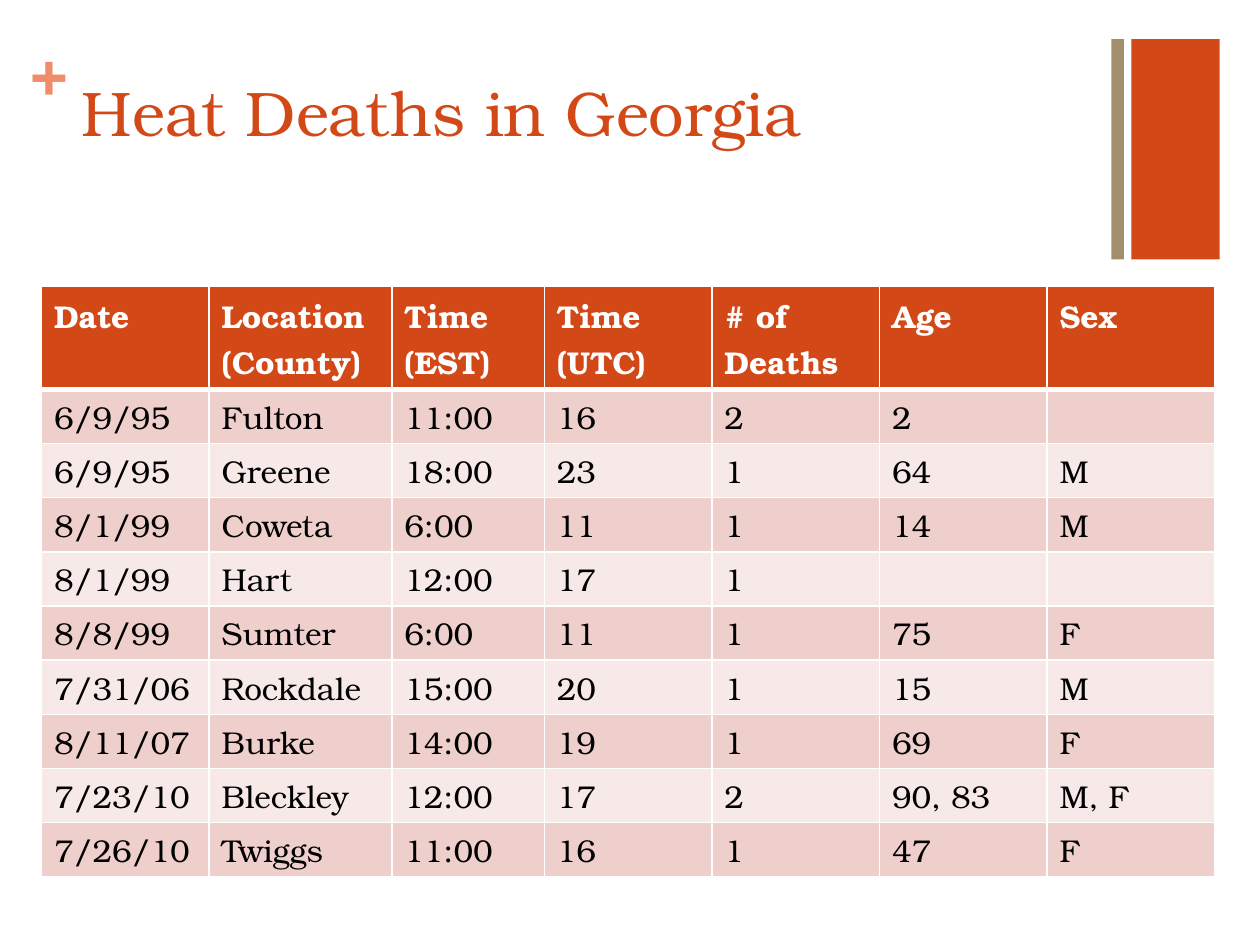
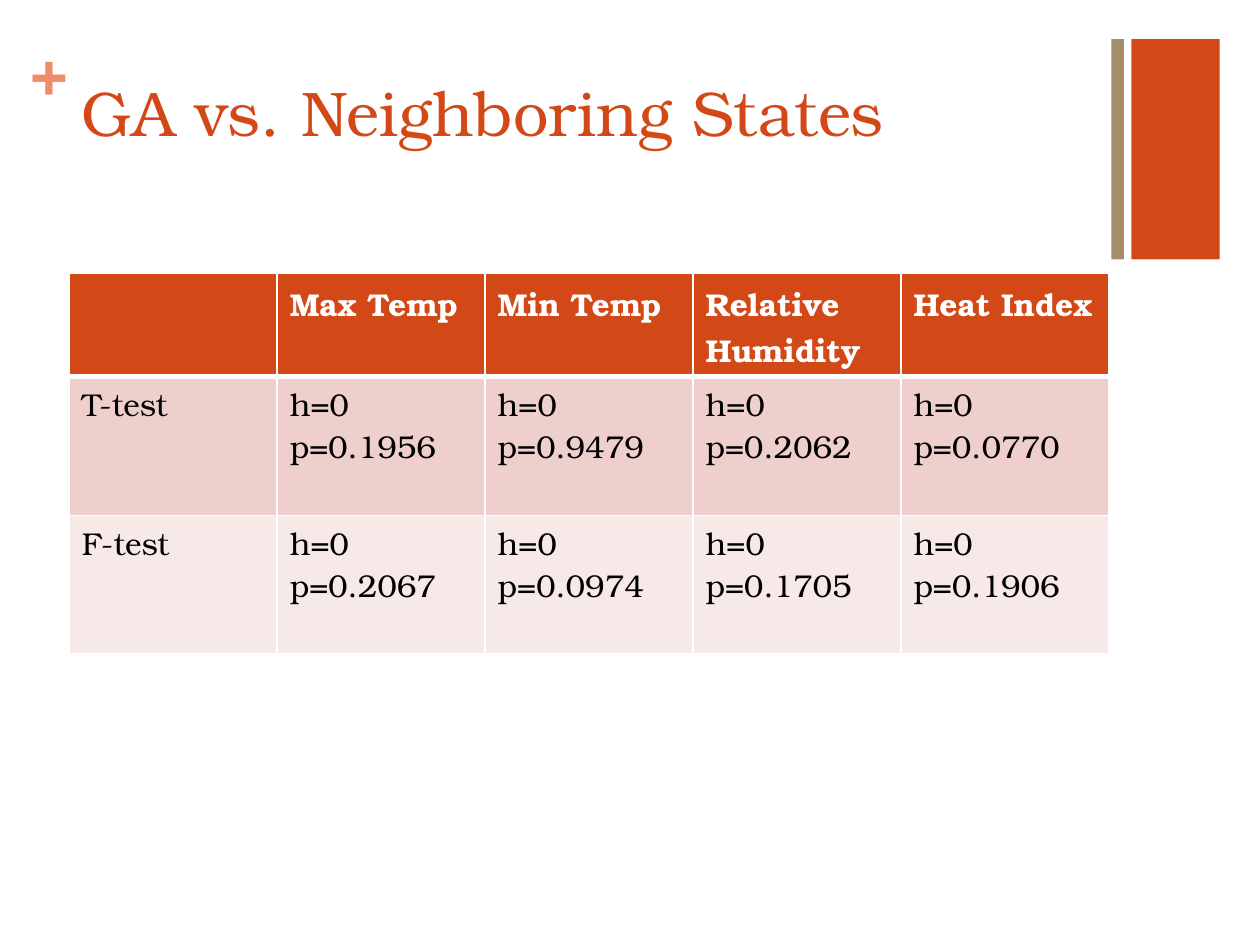
"""Build two slides of tables about heat deaths in Georgia."""
from lxml.etree import SubElement
from pptx import Presentation
from pptx.dml.color import RGBColor
from pptx.enum.shapes import MSO_SHAPE
from pptx.enum.text import MSO_ANCHOR, MSO_AUTO_SIZE, PP_ALIGN
from pptx.oxml.ns import qn
from pptx.util import Inches, Pt

FONT = "TeX Gyre Bonum"
ACCENT = "D34817"
TAN = "A28E6A"
SALMON = "EF8C6A"
WHITE = "FFFFFF"
BLACK = "000000"
BANDS = ("EFCFCC", "F7E9E8")
TITLE_ONLY = 5

DEATHS = [
    ("Date", "Location (County)", "Time (EST)", "Time (UTC)", "# of Deaths", "Age", "Sex"),
    ("6/9/95", "Fulton", "11:00", "16", "2", "2", ""),
    ("6/9/95", "Greene", "18:00", "23", "1", "64", "M"),
    ("8/1/99", "Coweta", "6:00", "11", "1", "14", "M"),
    ("8/1/99", "Hart", "12:00", "17", "1", "", ""),
    ("8/8/99", "Sumter", "6:00", "11", "1", "75", "F"),
    ("7/31/06", "Rockdale", "15:00", "20", "1", "15", "M"),
    ("8/11/07", "Burke", "14:00", "19", "1", "69", "F"),
    ("7/23/10", "Bleckley", "12:00", "17", "2", "90, 83", "M, F"),
    ("7/26/10", "Twiggs", "11:00", "16", "1", "47", "F"),
]
TESTS = [
    ("", "Max Temp", "Min Temp", "Relative Humidity", "Heat Index"),
    ("T-test", "h=0\np=0.1956", "h=0\np=0.9479", "h=0\np=0.2062", "h=0\np=0.0770"),
    ("F-test", "h=0\np=0.2067", "h=0\np=0.0974", "h=0\np=0.1705", "h=0\np=0.1906"),
]


def color(hex_string):
    """Turn a hex string into a colour."""
    return RGBColor.from_string(hex_string)


class Deck:
    """Hold the shared style and the current slide."""

    def __init__(self):
        """Start an empty presentation."""
        self.presentation = Presentation()
        self.presentation.slide_width = Inches(10)
        self.presentation.slide_height = Inches(7.5)
        self.slide = None

    def add_slide(self, title):
        """Add a slide with its decoration and title."""
        layout = self.presentation.slide_layouts[TITLE_ONLY]
        self.slide = self.presentation.slides.add_slide(layout)
        self.bar(8.98, 0.7, ACCENT)
        self.plus()
        self.bar(8.82, 0.1, TAN)
        self.title(title)

    def format_text(self, text_frame, size, hex_string, bold=False):
        """Align and format every run of a text frame."""
        for paragraph in text_frame.paragraphs:
            paragraph.alignment = PP_ALIGN.LEFT
            for run in paragraph.runs:
                run.font.name = FONT
                run.font.size = Pt(size)
                run.font.bold = bold
                run.font.color.rgb = color(hex_string)

    def bar(self, left, width, fill):
        """Add an upright bar in the top right corner."""
        shape = self.slide.shapes.add_shape(
            MSO_SHAPE.RECTANGLE, Inches(left), Inches(0.31), Inches(width), Inches(1.75))
        shape.shadow.inherit = False
        shape.fill.solid()
        shape.fill.fore_color.rgb = color(fill)
        shape.line.fill.background()

    def plus(self):
        """Add the plus sign beside the title."""
        box = self.slide.shapes.add_textbox(
            Inches(0.24), Inches(0.25), Inches(0.29), Inches(0.61))
        text_frame = box.text_frame
        text_frame.margin_left = text_frame.margin_right = 0
        text_frame.margin_top = text_frame.margin_bottom = 0
        text_frame.word_wrap = True
        text_frame.text = "+"
        self.format_text(text_frame, 36, SALMON, bold=True)

    def title(self, text):
        """Place and format the title placeholder."""
        title = self.slide.shapes.title
        title.left, title.top = Inches(0.55), Inches(0.53)
        title.width, title.height = Inches(8.26), Inches(1.22)
        text_frame = title.text_frame
        text_frame.text = text
        text_frame.auto_size = MSO_AUTO_SIZE.NONE
        text_frame.vertical_anchor = MSO_ANCHOR.TOP
        self.format_text(text_frame, 36, ACCENT)

    def borders(self, cell, top, bottom):
        """Draw white borders around a cell."""
        properties = cell._tc.get_or_add_tcPr()
        for side, width in (("L", 1), ("R", 1), ("T", top), ("B", bottom)):
            line = SubElement(properties, qn(f"a:ln{side}"), w=str(Pt(width)))
            fill = SubElement(line, qn("a:solidFill"))
            SubElement(fill, qn("a:srgbClr"), val=WHITE)

    def table(self, rows, left, top, widths, row_height):
        """Add a banded table with a header row."""
        heights = [0.82] + [row_height] * (len(rows) - 1)
        table = self.slide.shapes.add_table(
            len(rows), len(widths), Inches(left), Inches(top),
            Inches(sum(widths)), Inches(sum(heights))).table
        for column, width in zip(table.columns, widths):
            column.width = Inches(width)
        for index, (values, height) in enumerate(zip(rows, heights)):
            header = index == 0
            table.rows[index].height = Inches(height)
            for cell, value in zip(table.rows[index].cells, values):
                self.borders(cell, 3 if index == 1 else 1, 3 if header else 1)
                cell.fill.solid()
                cell.fill.fore_color.rgb = color(ACCENT if header else BANDS[(index - 1) % 2])
                cell.text_frame.text = value
                self.format_text(cell.text_frame, 18, WHITE if header else BLACK, bold=header)


def main():
    """Build and save the slides."""
    deck = Deck()
    deck.add_slide("Heat Deaths in Georgia")
    deck.table(DEATHS, 0.33, 2.27, [1.33, 1.45, 1.21] + [1.33] * 4, 0.43)
    deck.add_slide("GA vs. Neighboring States")
    deck.table(TESTS, 0.55, 2.17, [1.65] * 5, 1.1)
    deck.presentation.save("out.pptx")


if __name__ == "__main__":
    main()
